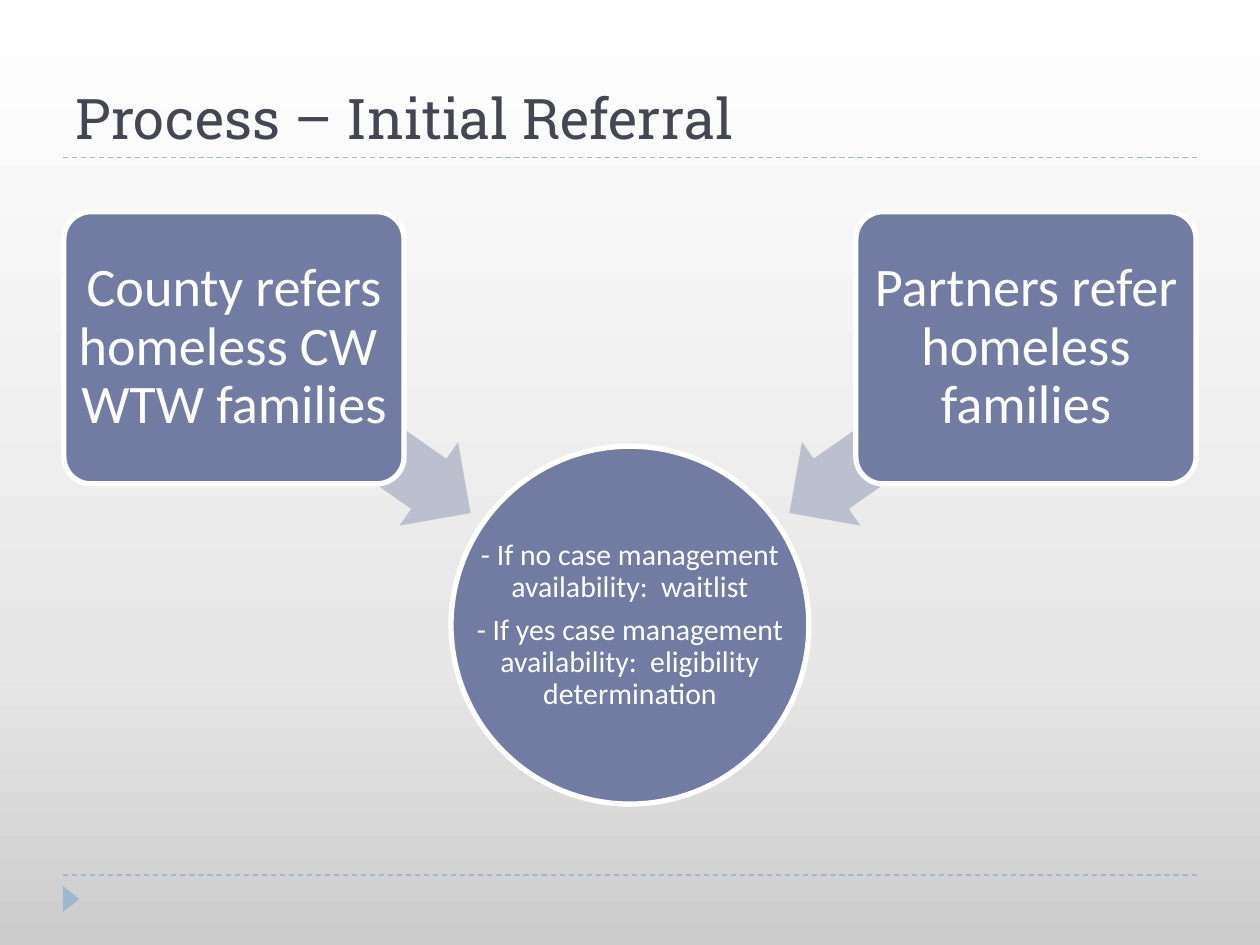
from copy import deepcopy
from dataclasses import dataclass

from lxml import etree
from pptx import Presentation
from pptx.dml.color import RGBColor
from pptx.enum.dml import MSO_LINE
from pptx.enum.shapes import MSO_CONNECTOR, MSO_SHAPE
from pptx.enum.text import MSO_ANCHOR, MSO_AUTO_SIZE, PP_ALIGN
from pptx.oxml.ns import qn
from pptx.util import Pt

DASH = MSO_LINE.DASH
STRAIGHT = MSO_CONNECTOR.STRAIGHT
ELLIPSE = MSO_SHAPE.OVAL
ROUNDED = MSO_SHAPE.ROUNDED_RECTANGLE
LEFT_ARROW = MSO_SHAPE.LEFT_ARROW
TRIANGLE = MSO_SHAPE.ISOSCELES_TRIANGLE
MIDDLE, BOTTOM = MSO_ANCHOR.MIDDLE, MSO_ANCHOR.BOTTOM
LEFT, CENTER = PP_ALIGN.LEFT, PP_ALIGN.CENTER
NO_AUTOFIT = MSO_AUTO_SIZE.NONE

SLIDE_WIDTH, SLIDE_HEIGHT = 720, 540
MARGIN = 36
TITLE_ONLY = 5


@dataclass(frozen=True)
class Theme:
    title_color: str = "464653"
    node: str = "727CA3"
    arrow: str = "BCBFCE"
    accent: str = "9FB8CD"
    white: str = "FFFFFF"
    background: tuple = ((0, "CCCCCC"), (0.3, "E7E7E7"), (1, "FFFFFF"))
    title_font: str = "Roboto Slab"
    body_font: str = "Calibri"
    title_size: int = 32
    box_size: int = 31
    circle_size: int = 17
    outline: int = 3
    rule: float = 0.75


THEME = Theme()


def color(value):
    return RGBColor.from_string(value)


def write_text(frame, *lines, size, font=THEME.body_font, text_color=THEME.white,
               align=CENTER, anchor=MIDDLE, spacing=0.9, after=0, inset=0):
    frame.auto_size = NO_AUTOFIT
    frame.word_wrap = True
    frame.vertical_anchor = anchor
    if inset is not None:
        frame.margin_left = frame.margin_right = Pt(inset)
        frame.margin_top = frame.margin_bottom = Pt(inset)
    for index, line in enumerate(lines):
        paragraph = frame.add_paragraph() if index else frame.paragraphs[0]
        paragraph.alignment = align
        paragraph.line_spacing = spacing
        paragraph.space_after = Pt(after)
        run = paragraph.add_run()
        run.text = line
        run.font.name = font
        run.font.size = Pt(size)
        run.font.color.rgb = color(text_color)


def paint_background(slide):
    fill = slide.background.fill
    fill.gradient()
    fill.gradient_angle = 90
    stop_list = slide.element.find(".//" + qn("a:gsLst"))
    stop_list.append(deepcopy(stop_list[0]))
    for stop, (position, value) in zip(fill.gradient_stops, THEME.background):
        stop.position = position
        stop.color.rgb = color(value)


def add_rule(slide, top):
    rule = slide.shapes.add_connector(
        STRAIGHT, Pt(MARGIN), Pt(top), Pt(SLIDE_WIDTH - MARGIN), Pt(top))
    rule.line.color.rgb = color(THEME.accent)
    rule.line.width = Pt(THEME.rule)
    rule.line.dash_style = DASH
    properties = rule.element.find(qn("p:spPr"))
    etree.SubElement(properties, qn("a:effectLst"))


def add_figure(slide, kind, left, top, width, height, fill,
               outlined=False, rotation=0, adjustments=()):
    shape = slide.shapes.add_shape(kind, Pt(left), Pt(top), Pt(width), Pt(height))
    shape.shadow.inherit = False
    shape.rotation = rotation
    shape.fill.solid()
    shape.fill.fore_color.rgb = color(fill)
    if outlined:
        shape.line.color.rgb = color(THEME.white)
        shape.line.width = Pt(THEME.outline)
    else:
        shape.line.fill.background()
    for index, value in enumerate(adjustments):
        shape.adjustments[index] = value
    return shape


def add_title(slide, text):
    title = slide.shapes.title
    title.left, title.top = Pt(MARGIN), Pt(12)
    title.width, title.height = Pt(SLIDE_WIDTH - 2 * MARGIN), Pt(78)
    write_text(title.text_frame, text, size=THEME.title_size, font=THEME.title_font,
               text_color=THEME.title_color, align=LEFT, anchor=BOTTOM,
               spacing=1, inset=None)


def add_outcome(slide, *lines):
    diameter, top = 204.5, 255
    left = (SLIDE_WIDTH - diameter) / 2
    add_figure(slide, ELLIPSE, left, top, diameter, diameter, THEME.node, outlined=True)
    label = slide.shapes.add_textbox(Pt(left), Pt(top), Pt(diameter), Pt(diameter))
    write_text(label.text_frame, *lines, size=THEME.circle_size, after=6, inset=0.8)


def add_source(slide, text, mirrored=False):
    def place(left, width):
        return SLIDE_WIDTH - left - width if mirrored else left

    arrow_width, box_width = 165, 194.4
    add_figure(slide, LEFT_ARROW, place(118.8, arrow_width), 216.7, arrow_width, 58.3,
               THEME.arrow, rotation=325 if mirrored else 215, adjustments=(0.6, 0.5))
    box = add_figure(slide, ROUNDED, place(36.5, box_width), 121, box_width, 155.5,
                     THEME.node, outlined=True, adjustments=(0.1,))
    write_text(box.text_frame, text, size=THEME.box_size)


def main():
    presentation = Presentation()
    presentation.slide_width = Pt(SLIDE_WIDTH)
    presentation.slide_height = Pt(SLIDE_HEIGHT)
    slide = presentation.slides.add_slide(presentation.slide_layouts[TITLE_ONLY])
    paint_background(slide)
    for top in (500, 90):
        add_rule(slide, top)
    add_figure(slide, TRIANGLE, 33.1, 509, 15, 9.4, THEME.accent, rotation=90)
    add_title(slide, "Process – Initial Referral")
    add_outcome(slide, "- If no case management availability:  waitlist",
                "- If yes case management availability:  eligibility determination")
    add_source(slide, "County refers homeless CW  WTW families")
    add_source(slide, "Partners refer homeless families", mirrored=True)
    presentation.save("out.pptx")


if __name__ == "__main__":
    main()
